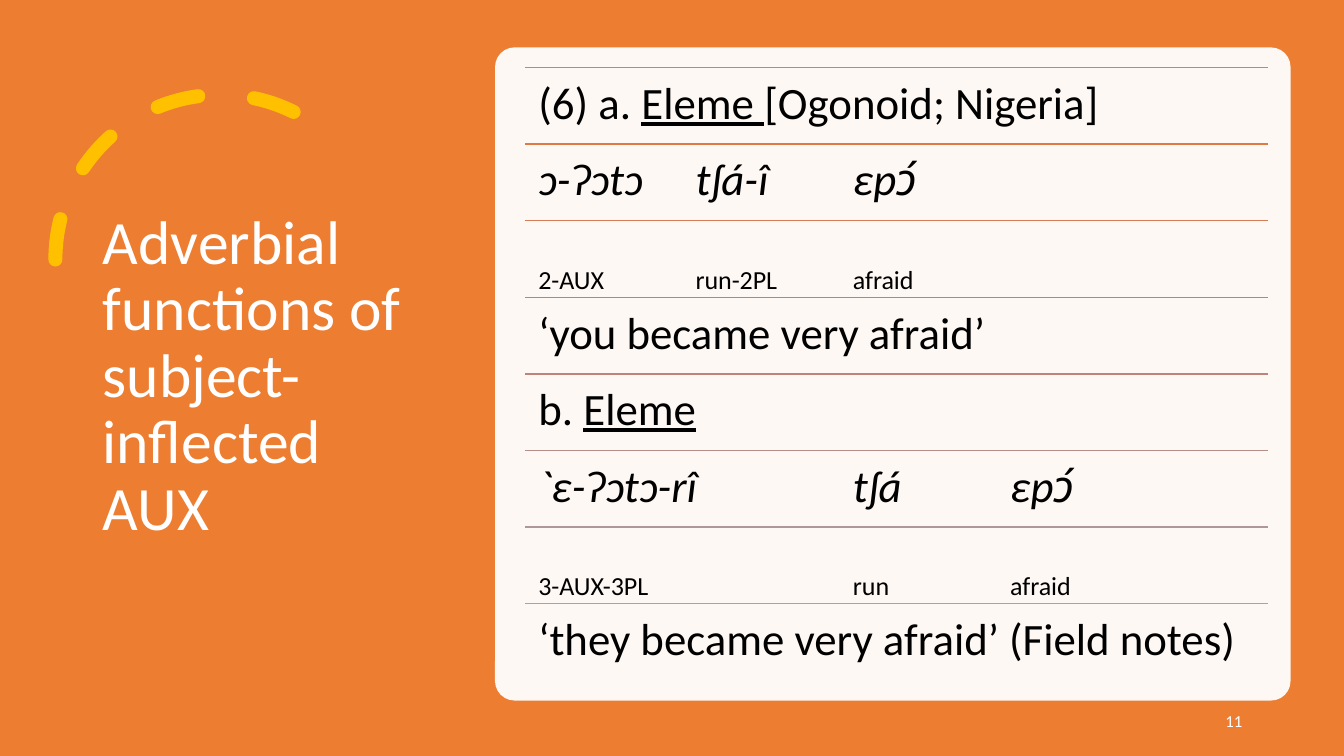
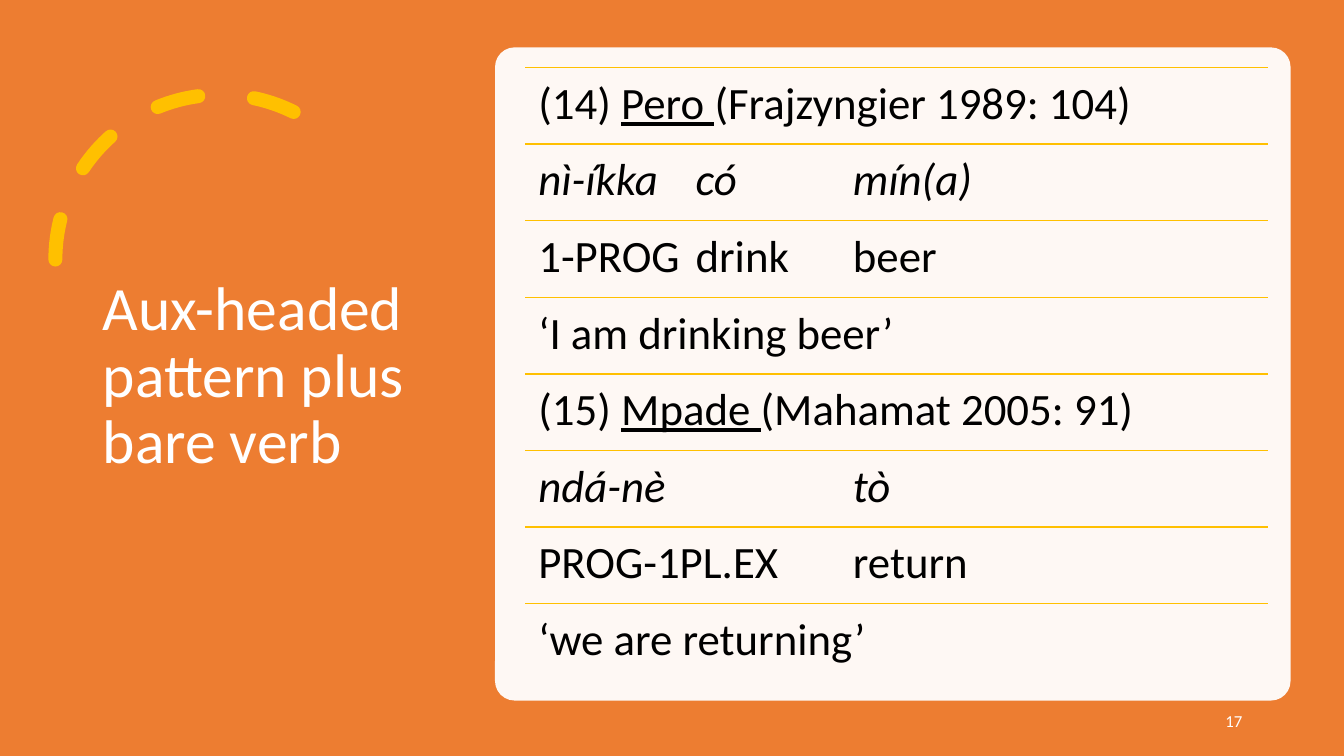
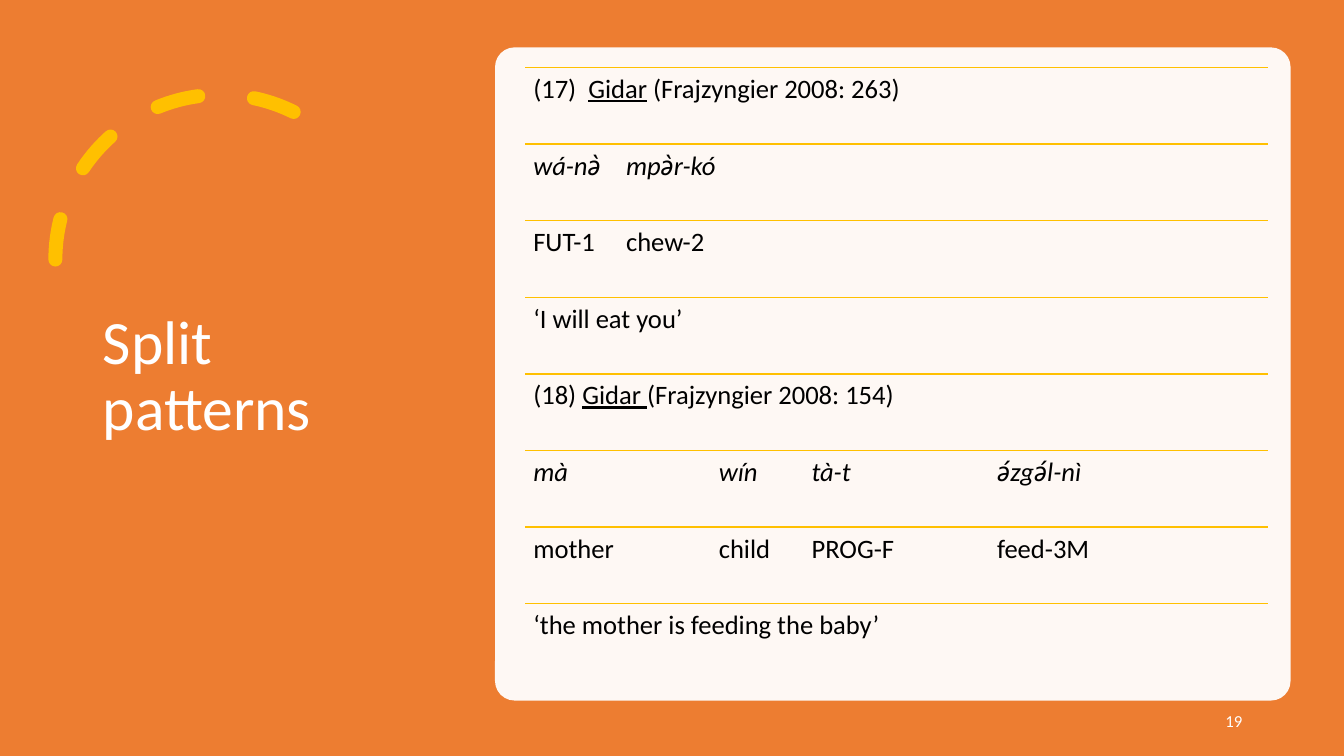
from lxml import etree
from pptx import Presentation
from pptx.dml.color import RGBColor
from pptx.enum.dml import MSO_LINE
from pptx.enum.shapes import MSO_CONNECTOR, MSO_SHAPE
from pptx.enum.text import MSO_ANCHOR, MSO_AUTO_SIZE, PP_ALIGN
from pptx.oxml.ns import qn
from pptx.util import Inches, Pt

DASH = MSO_LINE.DASH
STRAIGHT = MSO_CONNECTOR.STRAIGHT
RECTANGLE, ROUNDED, ARC = MSO_SHAPE.RECTANGLE, MSO_SHAPE.ROUNDED_RECTANGLE, MSO_SHAPE.ARC
TOP, MIDDLE = MSO_ANCHOR.TOP, MSO_ANCHOR.MIDDLE
NO_FIT = MSO_AUTO_SIZE.NONE
LEFT, RIGHT = PP_ALIGN.LEFT, PP_ALIGN.RIGHT

FONT = "Calibri"
ORANGE, GOLD, WHITE, BLACK = "ED7D31", "FFC000", "FFFFFF", "000000"
ORANGE_TO_GRAY = [ORANGE, "E07A44", "D57B56", "CA7E67", "BF8478", "B68D88", "AD9897", "A5A5A5"]
ROW_LEFT, ROW_TOP, ROW_WIDTH, ROW_HEIGHT = 5.21, 0.67, 7.37, 0.76
TAB_COUNT = 6

PLAIN = {}
LANGUAGE = {"underline": True}
WORDS = {"italic": True}
GLOSS = {"baseline": "-25000"}

LARGE = {"size": 32, "inset": 0.13, "tab": 1.56}
SMALL = {"size": 19, "inset": 0.08, "tab": 0.92}

SLIDES = [
    {
        "title": "Adverbial functions of subject-inflected AUX",
        "number": "11",
        "colors": ORANGE_TO_GRAY,
        "format": LARGE,
        "rows": [
            [("(6) a. ", PLAIN), ("Eleme ", LANGUAGE), ("[Ogonoid; Nigeria]", PLAIN)],
            [("ɔ-ʔɔtɔ \ttʃá-î \tɛpɔ́", WORDS)],
            [("2-AUX \trun-2PL \tafraid", GLOSS)],
            [("‘you became very afraid’", PLAIN)],
            [("b. ", PLAIN), ("Eleme", LANGUAGE)],
            [("`ɛ-ʔɔtɔ-rî \ttʃá \tɛpɔ́", WORDS)],
            [("3-AUX-3PL \t\trun \tafraid", GLOSS)],
            [("‘they became very afraid’ (Field notes)", PLAIN)],
        ],
    },
    {
        "title": "Aux-headed pattern plus bare verb",
        "number": "17",
        "colors": [GOLD] * 8,
        "format": LARGE,
        "rows": [
            [("(14) ", PLAIN), ("Pero ", LANGUAGE), ("(Frajzyngier 1989: 104)", PLAIN)],
            [("nì-íkka \tcó \tmín(a)", WORDS)],
            [("1-PROG \tdrink \tbeer", PLAIN)],
            [("‘I am drinking beer’", PLAIN)],
            [("(15) ", PLAIN), ("Mpade ", LANGUAGE), ("(Mahamat 2005: 91)", PLAIN)],
            [("ndá-nè \t\ttò", WORDS)],
            [("PROG-1PL.EX \treturn", PLAIN)],
            [("‘we are returning’", PLAIN)],
        ],
    },
    {
        "title": "Split patterns",
        "number": "19",
        "colors": [GOLD] * 8,
        "format": SMALL,
        "rows": [
            [("(17)  ", PLAIN), ("Gidar", LANGUAGE), (" (Frajzyngier 2008: 263)", PLAIN)],
            [("wá-nə̀ \tmpə̀r-kó", WORDS)],
            [("FUT-1 \tchew-2", PLAIN)],
            [("‘I will eat you’", PLAIN)],
            [("(18) ", PLAIN), ("Gidar ", LANGUAGE), ("(Frajzyngier 2008: 154)", PLAIN)],
            [("mà \t\twín \ttà-t \t\tə́zgə́l-nì", WORDS)],
            [("mother \t\tchild \tPROG-F \t\tfeed-3M", PLAIN)],
            [("‘the mother is feeding the baby’", PLAIN)],
        ],
    },
]


def rgb(value):
    """Turn a hex string into a colour."""
    return RGBColor.from_string(value)


def apply(target, values):
    """Set each named attribute on the target."""
    for name, value in values.items():
        setattr(target, name, value)


class Deck:
    """Hold the shared style and the current slide."""

    def __init__(self):
        """Start a widescreen presentation."""
        self.presentation = Presentation()
        self.presentation.slide_width = Inches(13.33)
        self.presentation.slide_height = Inches(7.5)
        self.slide = None

    def add_slide(self, title, number):
        """Add a slide with the shared decoration, title and number."""
        self.slide = self.presentation.slides.add_slide(self.presentation.slide_layouts[5])
        self.shape(RECTANGLE, (0, 0, 13.33, 7.5), ORANGE)
        self.dashed_arc()
        self.title(title)
        self.panel()
        self.number(number)

    def shape(self, kind, box, fill=None):
        """Add a shape without outline or shadow."""
        shape = self.slide.shapes.add_shape(kind, *map(Inches, box))
        shape.shadow.inherit = False
        shape.line.fill.background()
        if fill:
            shape.fill.solid()
            shape.fill.fore_color.rgb = rgb(fill)
        else:
            shape.fill.background()
        return shape

    def dashed_arc(self):
        """Add the gold arc with round dashes."""
        arc = self.shape(ARC, (0.55, 0.94, 3.27, 3.27))
        arc.adjustments[0] = 146.13
        arc.adjustments[1] = 0
        arc.element.spPr.find(qn("a:xfrm")).set("flipH", "1")
        arc.line.color.rgb = rgb(GOLD)
        apply(arc.line, {"width": Pt(10), "dash_style": DASH})
        arc.element.spPr.find(qn("a:ln")).set("cap", "rnd")

    def panel(self):
        """Add the nearly opaque white panel."""
        panel = self.shape(ROUNDED, (4.91, 0.47, 7.89, 6.48), WHITE)
        panel.adjustments[0] = 0.03
        color = panel.element.spPr.find(qn("a:solidFill")).find(qn("a:srgbClr"))
        etree.SubElement(color, qn("a:alpha"), val="95000")

    def title(self, text):
        """Place the title placeholder above the backdrop."""
        title = self.slide.shapes.title
        title.element.getparent().append(title.element)
        box = {"left": 0.92, "top": 0.7, "width": 3.23, "height": 6.09}
        apply(title, {name: Inches(value) for name, value in box.items()})
        paragraph = self.frame(title, MIDDLE)
        apply(paragraph, {"alignment": LEFT, "line_spacing": 0.9})
        self.run(paragraph, text, 44, WHITE)

    def number(self, text):
        """Add the slide number at the lower right."""
        shape = self.slide.shapes.add_textbox(*map(Inches, (9.42, 6.95, 3, 0.4)))
        paragraph = self.frame(shape, MIDDLE)
        apply(paragraph, {"alignment": RIGHT, "space_after": Pt(6)})
        self.run(paragraph, text, 12, WHITE)

    def frame(self, shape, anchor):
        """Set up a text frame and return its first paragraph."""
        frame = shape.text_frame
        apply(frame, {"word_wrap": True, "auto_size": NO_FIT, "vertical_anchor": anchor})
        return frame.paragraphs[0]

    def run(self, paragraph, text, size, color, style=PLAIN):
        """Add one formatted run."""
        run = paragraph.add_run()
        run.text = text
        font = {"name": FONT, "size": Pt(size)}
        font.update(style)
        baseline = font.pop("baseline", None)
        apply(run.font, font)
        run.font.color.rgb = rgb(color)
        if baseline:
            run.font._element.set("baseline", baseline)

    def rows(self, rows, colors, layout):
        """Add the ruled rows as one group."""
        group = self.slide.shapes.add_group_shape()
        for index, (runs, color) in enumerate(zip(rows, colors)):
            top = ROW_TOP + index * ROW_HEIGHT
            self.rule(group, top, color)
            self.row(group, top, runs, layout)

    def rule(self, group, top, color):
        """Add the thin line above a row."""
        ends = (ROW_LEFT, top, ROW_LEFT + ROW_WIDTH, top)
        rule = group.shapes.add_connector(STRAIGHT, *map(Inches, ends))
        rule.line.color.rgb = rgb(color)
        rule.line.width = Pt(1)
        etree.SubElement(rule.element.spPr, qn("a:effectLst"))

    def row(self, group, top, runs, layout):
        """Add the text of a row with evenly spaced tab stops."""
        box = (ROW_LEFT, top, ROW_WIDTH, ROW_HEIGHT)
        shape = group.shapes.add_textbox(*map(Inches, box))
        paragraph = self.frame(shape, TOP)
        sides = ("left", "top", "right", "bottom")
        inset = Inches(layout["inset"])
        apply(shape.text_frame, {f"margin_{side}": inset for side in sides})
        apply(paragraph, {"alignment": LEFT, "line_spacing": 0.9})
        properties = paragraph._p.get_or_add_pPr()
        space = etree.SubElement(properties, qn("a:spcAft"))
        etree.SubElement(space, qn("a:spcPct"), val="35000")
        tabs = etree.SubElement(properties, qn("a:tabLst"))
        for step in range(1, TAB_COUNT + 1):
            position = str(Inches(step * layout["tab"]))
            etree.SubElement(tabs, qn("a:tab"), pos=position, algn="l")
        for text, style in runs:
            self.run(paragraph, text, layout["size"], BLACK, style)


def main():
    """Build and save the slides."""
    deck = Deck()
    for content in SLIDES:
        deck.add_slide(content["title"], content["number"])
        deck.rows(content["rows"], content["colors"], content["format"])
    deck.presentation.save("out.pptx")


if __name__ == "__main__":
    main()
